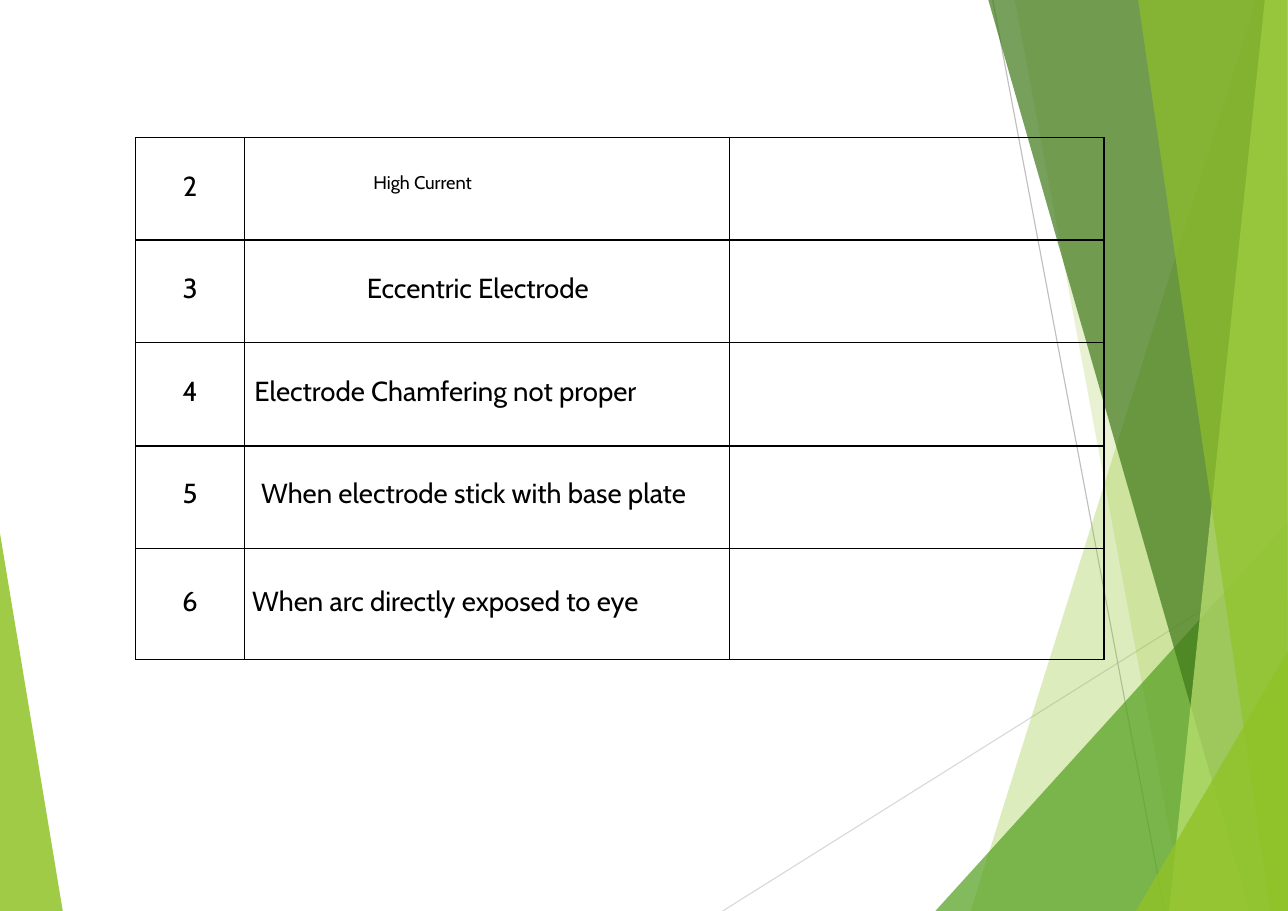
from pptx import Presentation
from pptx.dml.color import RGBColor
from pptx.enum.shapes import MSO_CONNECTOR
from pptx.enum.text import PP_ALIGN
from pptx.oxml.ns import qn
from pptx.util import Inches, Pt
from lxml.etree import SubElement

WIDTH, HEIGHT = 11.69, 8.27
FONT = "Cabin"
BLACK = RGBColor(0x00, 0x00, 0x00)
LIME = RGBColor(0x90, 0xC2, 0x26)
PALE_LIME = RGBColor(0xC0, 0xE4, 0x74)
GREEN = RGBColor(0x54, 0xA0, 0x21)
DARK_GREEN = RGBColor(0x3F, 0x78, 0x19)
LIGHT_GREY = RGBColor(0xD9, 0xD9, 0xD9)
GREY = RGBColor(0xBF, 0xBF, 0xBF)

LEFT_FACET = ([(0, 4.84), (0.57, HEIGHT), (0, HEIGHT)], LIME, 85)
RAYS = [
    ((6.56, HEIGHT), (WIDTH, 5.05), LIGHT_GREY),
    ((9.01, 0), (10.57, HEIGHT), GREY),
]
RIGHT_FACETS = [
    ([(11.4, 0), (8.81, HEIGHT), (WIDTH, HEIGHT), (WIDTH, 0)], LIME, 30),
    ([(9.21, 0), (10.75, HEIGHT), (WIDTH, HEIGHT), (WIDTH, 0)], LIME, 20),
    ([(8.49, HEIGHT), (WIDTH, 4.74), (WIDTH, HEIGHT)], GREEN, 72),
    ([(8.97, 0), (11.34, HEIGHT), (WIDTH, HEIGHT), (WIDTH, 0)], DARK_GREEN, 70),
    ([(11.48, 0), (10.61, HEIGHT), (WIDTH, HEIGHT), (WIDTH, 0)], PALE_LIME, 70),
    ([(10.33, 0), (11.53, HEIGHT), (WIDTH, HEIGHT), (11.68, 0)], LIME, 65),
    ([(10.31, HEIGHT), (WIDTH, 5.91), (WIDTH, HEIGHT)], LIME, 80),
]

COLUMN_WIDTHS = [0.99, 4.4, 3.4]
ROW_HEIGHTS = [0.93, 0.93, 0.94, 0.93, 1.01]
FIRST_NUMBER = 2
DEFECTS = [
    ("High Current", dict(size=12, left=1.17, top=0.31), 0.29),
    ("Eccentric Electrode", dict(left=1.11, top=0.29), 0.29),
    ("Electrode Chamfering not proper", dict(left=0.09, top=0.29), 0.29),
    ("When electrode stick with base plate", dict(left=0.15, top=0.28), 0.28),
    ("When arc directly exposed to eye", dict(left=0.07, top=0.33), 0.33),
]


def add_facet(slide, points, color, opacity):
    corners = [(Inches(x), Inches(y)) for x, y in points]
    builder = slide.shapes.build_freeform(*corners[0])
    builder.add_line_segments(corners[1:], close=True)
    shape = builder.convert_to_shape()
    shape.shadow.inherit = False
    shape.fill.solid()
    shape.fill.fore_color.rgb = color
    shape.line.fill.background()
    color_element = shape.fill._xPr.find(qn("a:solidFill"))[0]
    SubElement(color_element, qn("a:alpha")).set("val", str(opacity * 1000))


def add_ray(slide, start, end, color):
    lengths = [Inches(value) for value in start + end]
    connector = slide.shapes.add_connector(MSO_CONNECTOR.STRAIGHT, *lengths)
    connector.line.color.rgb = color
    connector.line.width = Pt(0.75)
    SubElement(connector._element.spPr, qn("a:effectLst"))


def write_text(cell, text, size=18, left=0, top=0, align=PP_ALIGN.LEFT):
    cell.margin_left = Inches(left)
    cell.margin_top = Inches(top)
    paragraph = cell.text_frame.paragraphs[0]
    paragraph.alignment = align
    run = paragraph.add_run()
    run.text = text
    run.font.name = FONT
    run.font.size = Pt(size)
    run.font.color.rgb = BLACK


def style_cell(cell):
    cell.margin_left = cell.margin_right = 0
    cell.margin_top = cell.margin_bottom = 0
    properties = cell._tc.get_or_add_tcPr()
    for side in ("lnL", "lnR", "lnT", "lnB"):
        border = SubElement(properties, qn(f"a:{side}"), w=str(Pt(1)))
        fill = SubElement(border, qn("a:solidFill"))
        SubElement(fill, qn("a:srgbClr"), val=str(BLACK))
    cell.fill.background()


def add_defect_table(slide):
    frame = slide.shapes.add_table(
        len(ROW_HEIGHTS), len(COLUMN_WIDTHS), Inches(1.23), Inches(1.25),
        Inches(sum(COLUMN_WIDTHS)), Inches(sum(ROW_HEIGHTS)))
    table = frame.table
    table.first_row = False
    table.horz_banding = False
    for column, width in zip(table.columns, COLUMN_WIDTHS):
        column.width = Inches(width)
    for row, height in zip(table.rows, ROW_HEIGHTS):
        row.height = Inches(height)
    for cell in table.iter_cells():
        style_cell(cell)
    for index, (defect, text_format, number_top) in enumerate(DEFECTS):
        write_text(table.cell(index, 0), str(index + FIRST_NUMBER),
                   top=number_top, align=PP_ALIGN.CENTER)
        write_text(table.cell(index, 1), defect, **text_format)


def main():
    presentation = Presentation()
    presentation.slide_width = Inches(WIDTH)
    presentation.slide_height = Inches(HEIGHT)
    slide = presentation.slides.add_slide(presentation.slide_layouts[6])
    add_facet(slide, *LEFT_FACET)
    for ray in RAYS:
        add_ray(slide, *ray)
    for facet in RIGHT_FACETS:
        add_facet(slide, *facet)
    add_defect_table(slide)
    presentation.save("out.pptx")


if __name__ == "__main__":
    main()
